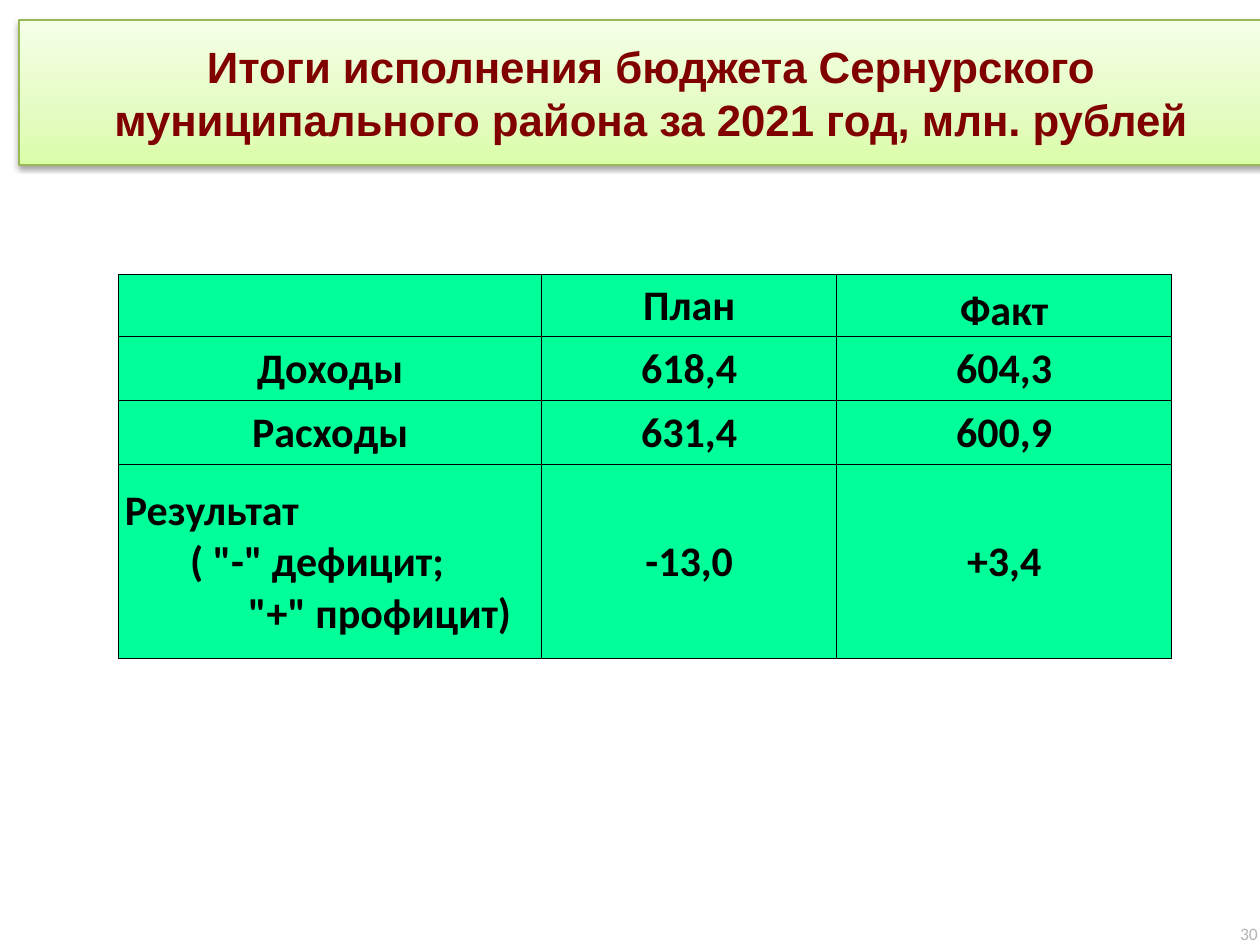
from pptx import Presentation
from pptx.dml.color import RGBColor
from pptx.enum.text import MSO_ANCHOR, PP_ALIGN
from pptx.oxml import parse_xml
from pptx.oxml.ns import nsdecls
from pptx.util import Inches, Pt

TITLE = "Итоги исполнения бюджета Сернурского муниципального района за 2021 год, млн. рублей"
PAGE_NUMBER = "30"
ROWS = [
    ["", "План", "Факт"],
    ["Доходы", "618,4", "604,3"],
    ["Расходы", "631,4", "600,9"],
    ["Результат\n( \"-\" дефицит;\n\"+\" профицит)", "-13,0", "+3,4"],
]
COLUMN_WIDTHS = [3.36, 2.34, 2.66]
ROW_HEIGHTS = [0.49, 0.51, 0.51, 1.54]
STEP_INDENTS = [0.04, 0.56, 1.02]
COLORS = {
    "title": "800000", "title_line": "98B955", "cell": "00FF99",
    "ink": "000000", "number": "B3B3B3",
}
TITLE_GRADIENT = [(0, "DAFDA7"), (35, "E4FCC2"), (100, "F5FFE7")]


def rgb(name):
    return RGBColor.from_string(COLORS[name])


def style(para, font_name, size, color, align, bold=False):
    para.alignment = align
    font = para.font
    font.name, font.size, font.bold = font_name, Pt(size), bold
    font.color.rgb = rgb(color)


def place(shape, left, top, width, height):
    shape.left, shape.top = Inches(left), Inches(top)
    shape.width, shape.height = Inches(width), Inches(height)


def add_title(page):
    title = page.shapes.title
    place(title, 0.15, 0.16, 10.03, 1.15)
    stops = "".join(
        f'<a:gs pos="{share * 1000}"><a:srgbClr val="{color}"/></a:gs>'
        for share, color in TITLE_GRADIENT)
    properties = title._element.spPr
    properties.append(parse_xml(
        f'<a:gradFill {nsdecls("a")} rotWithShape="1"><a:gsLst>{stops}</a:gsLst>'
        '<a:lin ang="16200000" scaled="0"/></a:gradFill>'))
    title.line.color.rgb = rgb("title_line")
    title.line.width = Pt(0.75)
    properties.append(parse_xml(
        f'<a:effectLst {nsdecls("a")}><a:outerShdw blurRad="{Pt(3.1)}" dist="{Pt(1.6)}" '
        'dir="5400000" rotWithShape="0"><a:srgbClr val="000000"><a:alpha val="38000"/>'
        '</a:srgbClr></a:outerShdw></a:effectLst>'))
    frame = title.text_frame
    frame.text = TITLE
    frame.vertical_anchor = MSO_ANCHOR.MIDDLE
    style(frame.paragraphs[0], "Arial", 25, "title", PP_ALIGN.CENTER, True)


def add_borders(cell):
    properties = cell._tc.get_or_add_tcPr()
    for position, side in enumerate(("lnL", "lnR", "lnT", "lnB")):
        properties.insert(position, parse_xml(
            f'<a:{side} {nsdecls("a")} w="{Pt(0.5)}"><a:solidFill>'
            f'<a:srgbClr val="{COLORS["ink"]}"/></a:solidFill></a:{side}>'))


def fill_cell(cell, text):
    cell.fill.solid()
    cell.fill.fore_color.rgb = rgb("cell")
    add_borders(cell)
    cell.margin_left = cell.margin_right = cell.margin_top = Inches(0.01)
    cell.margin_bottom = 0
    cell.vertical_anchor = MSO_ANCHOR.BOTTOM if text == "Факт" else MSO_ANCHOR.MIDDLE
    cell.text = text
    paras = cell.text_frame.paragraphs
    stepped = len(paras) > 1
    for para, indent in zip(paras, STEP_INDENTS):
        style(para, "Calibri", 24, "ink",
              PP_ALIGN.LEFT if stepped else PP_ALIGN.CENTER, True)
        if stepped:
            para._p.get_or_add_pPr().set("marL", str(Inches(indent)))


def add_budget_table(page):
    table = page.shapes.add_table(
        len(ROWS), len(COLUMN_WIDTHS), Inches(0.94), Inches(2.18),
        Inches(sum(COLUMN_WIDTHS)), Inches(sum(ROW_HEIGHTS))).table
    for column, width in zip(table.columns, COLUMN_WIDTHS):
        column.width = Inches(width)
    for row, height, texts in zip(table.rows, ROW_HEIGHTS, ROWS):
        row.height = Inches(height)
        for cell, text in zip(row.cells, texts):
            fill_cell(cell, text)


def add_page_number(page):
    box = page.shapes.add_textbox(
        Inches(9.73), Inches(7.28), Inches(0.35), Inches(0.31))
    frame = box.text_frame
    frame.word_wrap = True
    frame.text = PAGE_NUMBER
    style(frame.paragraphs[0], "Calibri", 10, "number", PP_ALIGN.RIGHT)


def main():
    deck = Presentation()
    deck.slide_width, deck.slide_height = Inches(10), Inches(7.5)
    page = deck.slides.add_slide(deck.slide_layouts[5])
    add_title(page)
    add_page_number(page)
    add_budget_table(page)
    deck.save("out.pptx")


if __name__ == "__main__":
    main()
